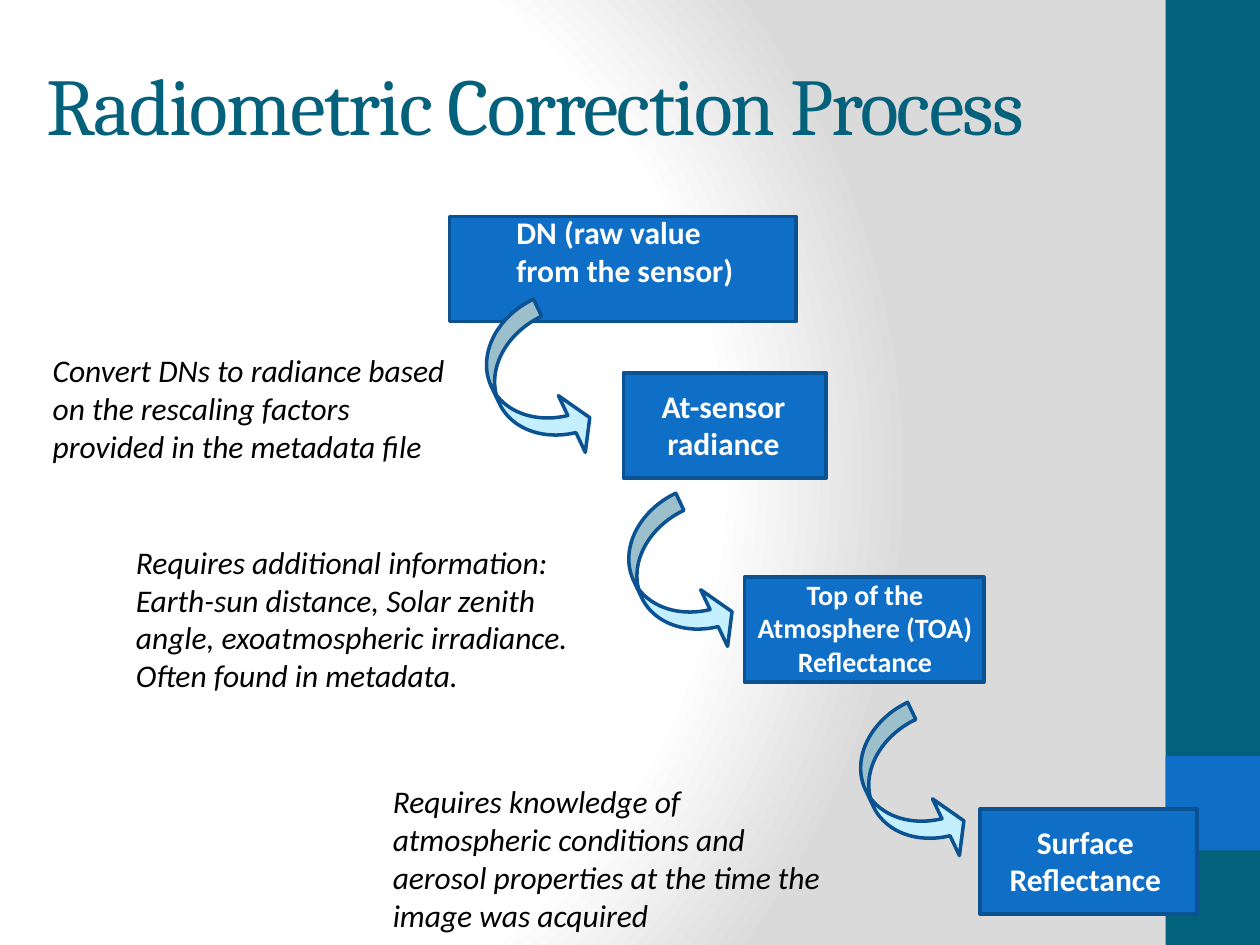
from dataclasses import dataclass

import pptx
import pptx.oxml
import pptx.util
from pptx.dml.color import RGBColor
from pptx.enum.shapes import MSO_SHAPE
from pptx.enum.text import MSO_ANCHOR, MSO_AUTO_SIZE, PP_ALIGN

Pt = pptx.util.Pt


@dataclass(frozen=True)
class Theme:
    teal: str = "04617B"
    blue: str = "0F6FC6"
    edge: str = "0B5292"
    pale: str = "C4EFFF"
    white: str = "FFFFFF"
    black: str = "000000"
    grey: str = "DADADA"
    head: str = "Cambria"
    body: str = "Calibri"
    title: float = 46
    text: float = 18
    small: float = 16
    line: float = 2


THEME = Theme()
WIDE, HIGH = 720, 540

BACK = """<p:bg
 xmlns:p="http://schemas.openxmlformats.org/presentationml/2006/main"
 xmlns:a="http://schemas.openxmlformats.org/drawingml/2006/main">
<p:bgPr><a:gradFill rotWithShape="1"><a:gsLst>
<a:gs pos="0"><a:srgbClr val="{0}"/></a:gs>
<a:gs pos="75000"><a:srgbClr val="{0}"/></a:gs>
<a:gs pos="100000"><a:srgbClr val="{1}"/></a:gs></a:gsLst>
<a:path path="circle">
<a:fillToRect l="20000" t="50000" r="100000" b="50000"/></a:path>
</a:gradFill><a:effectLst/></p:bgPr></p:bg>"""

STEP_HIGH = 60
# plate left, top, width; label shift x, y, width, height; text, size, align
STEPS = [
    ((257, 123.8, 198), (31, -5.7, 153.4, 51),
     "DN (raw value from the sensor)", THEME.text, PP_ALIGN.LEFT),
    ((356.2, 213.1, 116), (2.9, 4.3, 108.7, 51),
     "At-sensor radiance", THEME.text, PP_ALIGN.CENTER),
    ((425.5, 329.8, 136.8), (-4.3, -3.6, 146.2, 65.5),
     "Top of the Atmosphere (TOA) Reflectance", THEME.small, PP_ALIGN.CENTER),
    ((560, 462.2, 124), (2.9, 4.3, 114.5, 51),
     "Surface Reflectance", THEME.text, PP_ALIGN.CENTER),
]
NOTES = [
    ((23, 197.3, 238.3, 72.7),
     ["Convert DNs to radiance based on the rescaling factors provided in "
      "the metadata file"]),
    ((70.6, 306.7, 270, 94.5),
     ["Requires additional information:",
      "Earth-sun distance, Solar zenith angle, exoatmospheric irradiance. "
      "Often found in metadata."]),
    ((217.4, 443.5, 264.2, 94.5),
     ["Requires knowledge of atmospheric conditions and aerosol properties "
      "at the time the image was acquired"]),
]
ARROWS = [(283.7, 175.7), (365, 286.6), (497.5, 406.1)]


def color(code):
    return RGBColor.from_string(code)


def add_form(parent, kind, box, fill, edge=None):
    form = parent.add_shape(kind, *map(Pt, box))
    form.shadow.inherit = False
    form.fill.solid()
    form.fill.fore_color.rgb = color(fill)
    if edge:
        form.line.color.rgb = color(edge)
        form.line.width = Pt(THEME.line)
    else:
        form.line.fill.background()
    return form


def add_text(parent, box, lines, size, ink, face=THEME.body,
             align=PP_ALIGN.LEFT, bold=False, slant=False):
    frame = parent.add_textbox(*map(Pt, box)).text_frame
    frame.word_wrap = True
    frame.auto_size = MSO_AUTO_SIZE.SHAPE_TO_FIT_TEXT
    frame.text = "\n".join(lines)
    for para in frame.paragraphs:
        para.alignment = align
        font = para.font
        font.name, font.size = face, Pt(size)
        font.bold, font.italic = bold, slant
        font.color.rgb = color(ink)
    return frame


def add_back(slide):
    slide.element.cSld.insert(
        0, pptx.oxml.parse_xml(BACK.format(THEME.white, THEME.grey)))


def add_band(shapes, box):
    """Side band with a square accent near its foot."""
    left, top, width, height = box
    add_form(shapes, MSO_SHAPE.RECTANGLE, box, THEME.teal)
    add_form(shapes, MSO_SHAPE.RECTANGLE,
             (left, top + height * 0.8, width, width), THEME.blue)


def add_title(shapes, box, text):
    frame = add_text(shapes, box, [text], THEME.title, THEME.teal, THEME.head)
    frame.auto_size = MSO_AUTO_SIZE.NONE
    frame.vertical_anchor = MSO_ANCHOR.MIDDLE
    run = frame.paragraphs[0].runs[0]
    run._r.get_or_add_rPr().set("spc", "-100")


def add_step(shapes, plate, label, text, size, align):
    """Plate and its label, which is placed relative to the plate."""
    left, top, width = plate
    dx, dy, wide, high = label
    group = shapes.add_group_shape().shapes
    add_form(group, MSO_SHAPE.RECTANGLE, (left, top, width, STEP_HIGH),
             THEME.blue, THEME.edge)
    add_text(group, (left + dx, top + dy, wide, high), [text], size,
             THEME.white, align=align, bold=True)


def add_arrow(shapes, left, top):
    arrow = add_form(shapes, MSO_SHAPE.CURVED_RIGHT_ARROW,
                     (left, top, 43.2, 92.9), THEME.pale, THEME.edge)
    arrow.rotation = 334.6
    for index, value in enumerate((0.25, 0.83, 0.25)):
        arrow.adjustments[index] = value


def main():
    deck = pptx.Presentation()
    deck.slide_width, deck.slide_height = Pt(WIDE), Pt(HIGH)
    slide = deck.slides.add_slide(deck.slide_layouts[6])
    shapes = slide.shapes
    add_back(slide)
    add_band(shapes, (666, 0, 54, HIGH))
    for step in STEPS:
        add_step(shapes, *step)
    for box, lines in NOTES:
        add_text(shapes, box, lines, THEME.text, THEME.black, slant=True)
    for spot in ARROWS:
        add_arrow(shapes, *spot)
    add_title(shapes, (19.4, 20.2, 642.2, 77.8),
              "Radiometric Correction Process")
    deck.save("out.pptx")


if __name__ == "__main__":
    main()
